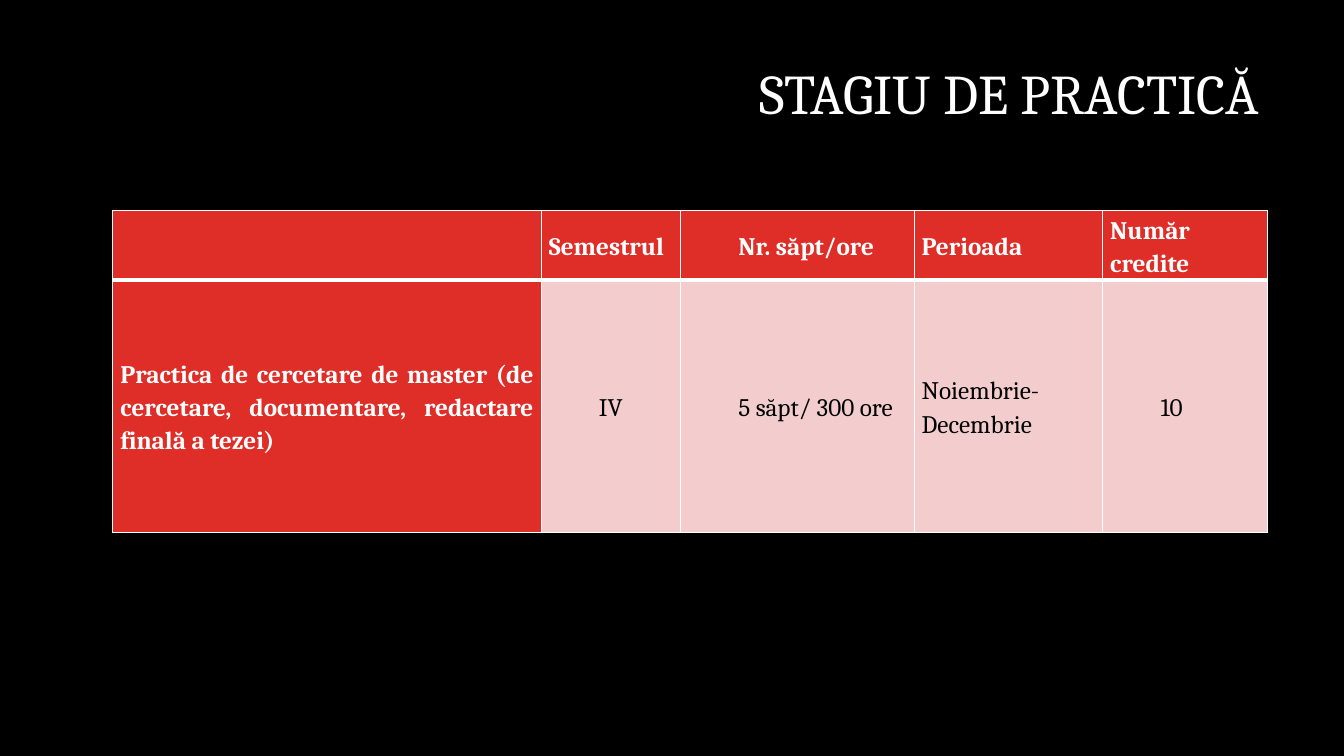
"""Builds the slide on the practical training stage, with one table."""
from lxml.etree import SubElement
from pptx import Presentation
from pptx.dml.color import RGBColor
from pptx.enum.text import MSO_ANCHOR, PP_ALIGN
from pptx.oxml import parse_xml
from pptx.oxml.ns import nsdecls, qn
from pptx.util import Pt

TITLE = "STAGIU DE PRACTICĂ"
ROWS = [
    ["", "Semestrul", "Nr. săpt/ore", "Perioada", "Număr credite"],
    ["Practica de cercetare de master (de cercetare, documentare, redactare finală a tezei)",
     "IV", "5 săpt/ 300 ore", "Noiembrie-Decembrie", "10"],
]
WIDTHS = [306, 99.4, 167, 134.7, 118]
HEIGHTS = [48, 180]
INDENTED = {(0, 2), (1, 2), (1, 4)}
CENTRED = {(1, 1)}
FONT = "Cambria"
BLACK, WHITE, RED, PINK = "000000", "FFFFFF", "DF2E28", "F3CDCD"


def paint(fill, color):
    fill.solid()
    fill.fore_color.rgb = RGBColor.from_string(color)


def style(para, size, color, bold=False):
    font = para.font
    font.name, font.size, font.bold = FONT, Pt(size), bold
    paint(font.fill, color)


def border(cell, top, bottom):
    props = cell._tc.get_or_add_tcPr()
    sides = [("lnL", 1), ("lnR", 1), ("lnT", top), ("lnB", bottom)]
    for spot, (side, width) in enumerate(sides):
        line = parse_xml(f'<a:{side} {nsdecls("a")} w="{Pt(width)}"/>')
        fill = SubElement(line, qn("a:solidFill"))
        SubElement(fill, qn("a:srgbClr"), val=WHITE)
        props.insert(spot, line)


def add_title(slide):
    box = slide.shapes.add_textbox(Pt(228), Pt(21.6), Pt(678.5), Pt(95))
    frame = box.text_frame
    frame.word_wrap = True
    frame.vertical_anchor = MSO_ANCHOR.MIDDLE
    para = frame.paragraphs[0]
    para.text = TITLE
    para.alignment = PP_ALIGN.RIGHT
    para.line_spacing = 0.9
    style(para, 40, WHITE)


def fill_cell(cell, row, col):
    head = row == 0 or col == 0
    paint(cell.fill, RED if head else PINK)
    border(cell, 1 if row == 0 else 3, 3 if row == 0 else 1)
    cell.vertical_anchor = MSO_ANCHOR.MIDDLE
    cell.margin_left = cell.margin_right = Pt(5.4)
    cell.margin_top = cell.margin_bottom = 0
    para = cell.text_frame.paragraphs[0]
    para.text = ROWS[row][col]
    para.alignment = PP_ALIGN.CENTER if (row, col) in CENTRED else PP_ALIGN.JUSTIFY
    para.line_spacing = 1.15
    para.space_after = Pt(8)
    if (row, col) in INDENTED:
        para._p.get_or_add_pPr().set("indent", str(Pt(36)))
    style(para, 18, WHITE if head else BLACK, head)


def add_grid(slide):
    frame = slide.shapes.add_table(len(ROWS), len(WIDTHS), Pt(80.6), Pt(150.5),
                                   Pt(sum(WIDTHS)), Pt(sum(HEIGHTS)))
    table = frame.table
    for col, width in enumerate(WIDTHS):
        table.columns[col].width = Pt(width)
    for row, height in enumerate(HEIGHTS):
        table.rows[row].height = Pt(height)
        for col in range(len(WIDTHS)):
            fill_cell(table.cell(row, col), row, col)


def main():
    deck = Presentation()
    deck.slide_width, deck.slide_height = Pt(960), Pt(540)
    slide = deck.slides.add_slide(deck.slide_layouts[6])
    paint(slide.background.fill, BLACK)
    add_title(slide)
    add_grid(slide)
    deck.save("out.pptx")


if __name__ == "__main__":
    main()
